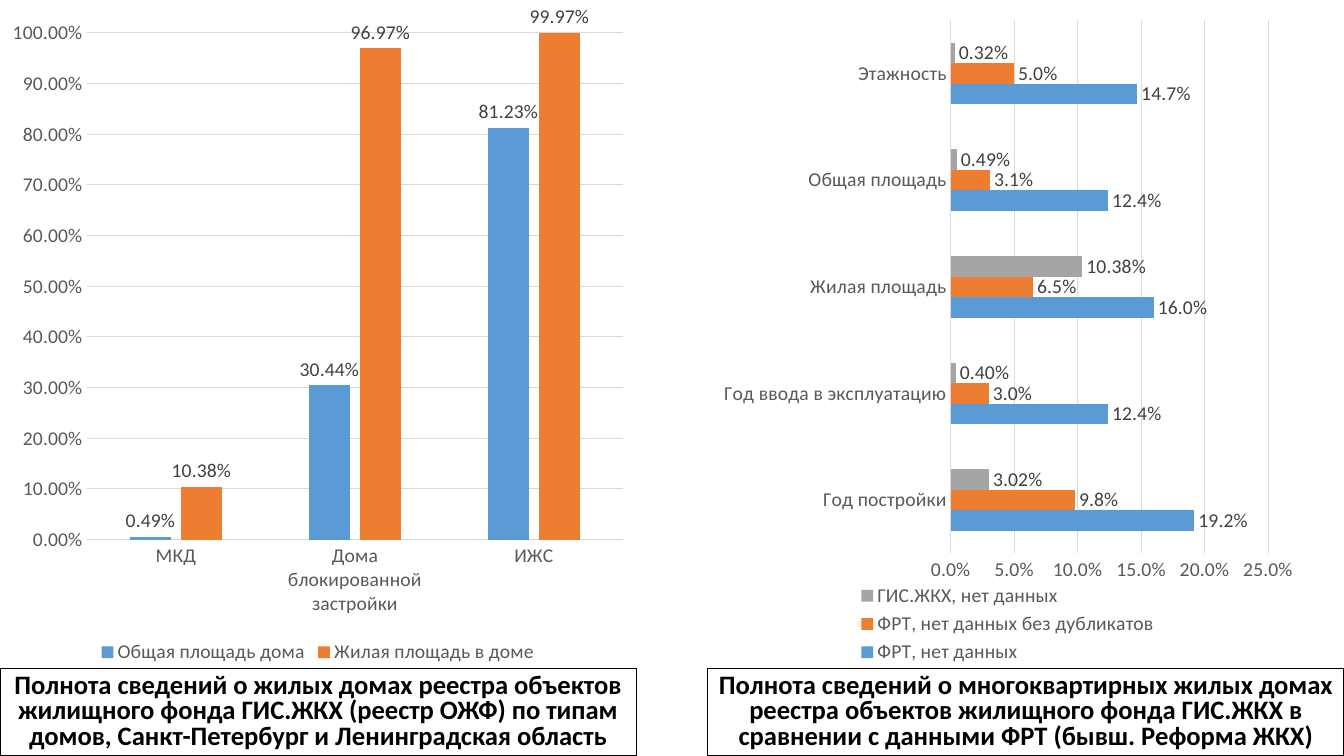
from lxml import etree
from pptx import Presentation
from pptx.chart.data import CategoryChartData
from pptx.dml.color import RGBColor
from pptx.enum.chart import XL_CHART_TYPE, XL_LABEL_POSITION, XL_LEGEND_POSITION, XL_TICK_MARK
from pptx.enum.shapes import MSO_SHAPE
from pptx.enum.text import MSO_ANCHOR, PP_ALIGN
from pptx.oxml.ns import qn
from pptx.util import Inches, Pt

COLUMNS = XL_CHART_TYPE.COLUMN_CLUSTERED
BARS = XL_CHART_TYPE.BAR_CLUSTERED
OUTSIDE_END = XL_LABEL_POSITION.OUTSIDE_END
BOTTOM = XL_LEGEND_POSITION.BOTTOM
NO_TICK = XL_TICK_MARK.NONE
RECTANGLE = MSO_SHAPE.RECTANGLE
MIDDLE = MSO_ANCHOR.MIDDLE
CENTER = PP_ALIGN.CENTER

FONT = "Calibri"
COLORS = {
    "white": "FFFFFF",
    "black": "000000",
    "axis_text": "595959",
    "label_text": "404040",
    "grid": "D9D9D9",
    "blue": "5B9BD5",
    "orange": "ED7D31",
    "gray": "A5A5A5",
}
LEFT_X, RIGHT_X = 0, 7.02
CHART_TOP, CHART_HEIGHT = 0.05, 6.58
CAPTION_TOP, CAPTION_WIDTH, CAPTION_HEIGHT = 6.63, 6.31, 0.87

HOUSE_TYPES = ["МКД", "Дома блокированной застройки", "ИЖС"]
HOUSE_SERIES = [
    ("Общая площадь дома", [0.0049, 0.3044, 0.8123], "blue", "0.00%"),
    ("Жилая площадь в доме", [0.1038, 0.9697, 0.9997], "orange", "0.00%"),
]
ATTRIBUTES = [
    "Год постройки",
    "Год ввода в эксплуатацию",
    "Жилая площадь",
    "Общая площадь",
    "Этажность",
]
REGISTER_SERIES = [
    ("ФРТ, нет данных", [0.192, 0.124, 0.16, 0.124, 0.147], "blue", "0.0%"),
    ("ФРТ, нет данных без дубликатов", [0.098, 0.03, 0.065, 0.031, 0.05], "orange", "0.0%"),
    ("ГИС.ЖКХ, нет данных", [0.0302, 0.004, 0.1038, 0.0049, 0.0032], "gray", "0.00%"),
]
HOUSE_CAPTION = (
    "Полнота сведений о жилых домах реестра объектов жилищного фонда ГИС.ЖКХ "
    "(реестр ОЖФ) по типам домов, Санкт-Петербург и Ленинградская область"
)
REGISTER_CAPTION = (
    "Полнота сведений о многоквартирных жилых домах реестра объектов жилищного фонда "
    "ГИС.ЖКХ в сравнении с данными ФРТ (бывш. Реформа ЖКХ)"
)


def rgb(name):
    """Return the named palette colour."""
    return RGBColor.from_string(COLORS[name])


def style_font(font, size, color, bold=False):
    """Apply the slide's typeface with a size, colour and weight."""
    font.name = FONT
    font.size = Pt(size)
    font.bold = bold
    font.color.rgb = rgb(color)


def style_line(line, color):
    """Draw a thin solid line in the given colour."""
    line.color.rgb = rgb(color)
    line.width = Pt(0.75)


def add_caption(slide, left, text):
    """Add a framed bold caption at the bottom of the slide."""
    caption = slide.shapes.add_shape(
        RECTANGLE, Inches(left), Inches(CAPTION_TOP), Inches(CAPTION_WIDTH), Inches(CAPTION_HEIGHT)
    )
    caption.shadow.inherit = False
    caption.fill.solid()
    caption.fill.fore_color.rgb = rgb("white")
    style_line(caption.line, "black")
    frame = caption.text_frame
    frame.word_wrap = True
    frame.vertical_anchor = MIDDLE
    paragraph = frame.paragraphs[0]
    paragraph.text = text
    paragraph.alignment = CENTER
    paragraph.line_spacing = 0.8
    style_font(paragraph.font, 19, "black", bold=True)


def style_axes(chart, value_format):
    """Format the category and value axes and the gridlines."""
    for axis in (chart.category_axis, chart.value_axis):
        axis.major_tick_mark = NO_TICK
        axis.minor_tick_mark = NO_TICK
        style_font(axis.tick_labels.font, 14, "axis_text")
    style_line(chart.category_axis.format.line, "grid")
    values = chart.value_axis
    values.format.line.fill.background()
    values.has_major_gridlines = True
    style_line(values.major_gridlines.format.line, "grid")
    values.tick_labels.number_format = value_format
    values.tick_labels.number_format_is_linked = False


def style_series(series, color, label_format):
    """Colour a series and label its values."""
    series.format.fill.solid()
    series.format.fill.fore_color.rgb = rgb(color)
    series.invert_if_negative = False
    labels = series.data_labels
    labels.show_value = True
    labels.position = OUTSIDE_END
    labels.number_format = label_format
    labels.number_format_is_linked = False
    style_font(labels.font, 14, "label_text")


def add_bar_chart(slide, kind, left, width, categories, series_rows, value_format, overlap):
    """Add a clustered chart with a bottom legend and return it."""
    data = CategoryChartData(number_format="0.00%")
    data.categories = categories
    for name, values, _, _ in series_rows:
        data.add_series(name, values)
    chart = slide.shapes.add_chart(
        kind, Inches(left), Inches(CHART_TOP), Inches(width), Inches(CHART_HEIGHT), data
    ).chart
    style_font(chart.font, 10, "black")
    chart.has_title = False
    chart.has_legend = True
    chart.legend.position = BOTTOM
    chart.legend.include_in_layout = False
    style_font(chart.legend.font, 14, "axis_text")
    style_axes(chart, value_format)
    plot = chart.plots[0]
    plot.vary_by_categories = False
    plot.gap_width = 219
    plot.overlap = overlap
    for series, (_, _, color, label_format) in zip(plot.series, series_rows):
        style_series(series, color, label_format)
    return chart


def place_plot(chart, x, y, w, h):
    """Fix the inner plot area as fractions of the chart."""
    area = chart.element.find(".//" + qn("c:plotArea"))
    for previous in area.findall(qn("c:layout")):
        area.remove(previous)
    layout = etree.Element(qn("c:layout"))
    manual = etree.SubElement(layout, qn("c:manualLayout"))
    settings = [("layoutTarget", "inner"), ("xMode", "edge"), ("yMode", "edge")]
    settings += [("x", x), ("y", y), ("w", w), ("h", h)]
    for tag, value in settings:
        etree.SubElement(manual, qn("c:" + tag)).set("val", str(value))
    area.insert(0, layout)


def main():
    """Build the slide with two charts and their captions."""
    presentation = Presentation()
    presentation.slide_width = Inches(13.33)
    presentation.slide_height = Inches(7.5)
    slide = presentation.slides.add_slide(presentation.slide_layouts[6])
    add_caption(slide, LEFT_X, HOUSE_CAPTION)
    add_caption(slide, RIGHT_X, REGISTER_CAPTION)
    houses = add_bar_chart(
        slide, COLUMNS, LEFT_X, 6.31, HOUSE_TYPES, HOUSE_SERIES, "0.00%", -27
    )
    houses.value_axis.maximum_scale = 1
    registers = add_bar_chart(
        slide, BARS, RIGHT_X, 5.95, ATTRIBUTES, REGISTER_SERIES, "0.0%", 0
    )
    place_plot(registers, 0.405, 0.023, 0.529, 0.804)
    presentation.save("out.pptx")


if __name__ == "__main__":
    main()
